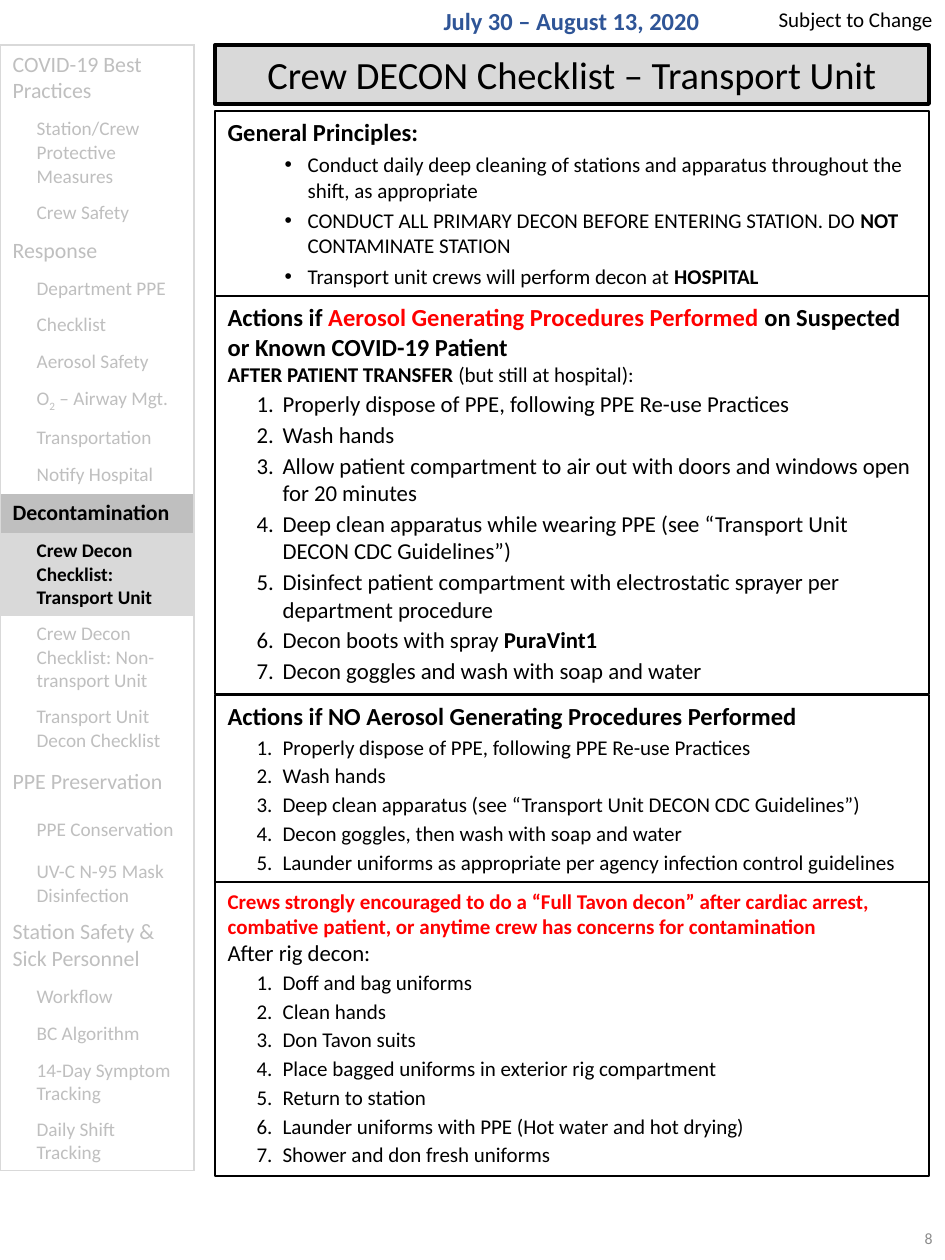
import pptx
import pptx.util
import pptx.dml.color
import pptx.enum.text
import pptx.oxml.ns
import lxml.etree

PX = 914400 / 126
FONT = "Calibri"
COLORS = {"black": "000000", "red": "FF0000", "blue": "2F5597", "gray": "8C8C8C",
          "muted": "BFBFBF", "light": "D9D9D9", "white": "FFFFFF"}
ALIGN = pptx.enum.text.PP_ALIGN
ANCHOR = pptx.enum.text.MSO_ANCHOR


def px(value):
    return pptx.util.Emu(round(value * PX))


def add_runs(para, size, runs):
    """Each run is (text, colour name, bold)."""
    for text, color, bold in runs:
        span = para.add_run()
        span.text = text
        span.font.name = FONT
        span.font.size = pptx.util.Pt(size)
        span.font.bold = bold
        span.font.color.rgb = pptx.dml.color.RGBColor.from_string(COLORS[color])


deck = pptx.Presentation()
deck.slide_width = px(945)
deck.slide_height = px(1260)
page = deck.slides.add_slide(deck.slide_layouts.get_by_name("Comparison"))

# Header and page number
labels = [
    ("July 30 – August 13, 2020", (410, 0, 323, 42), 14, "blue", True, ALIGN.CENTER, ANCHOR.TOP),
    ("Subject to Change", (732, 0, 213, 38), 12, "black", False, ALIGN.RIGHT, ANCHOR.TOP),
    ("8", (732, 1205, 213, 67), 9, "gray", False, ALIGN.RIGHT, ANCHOR.MIDDLE),
]
for text, place, size, color, bold, align, anchor in labels:
    box = page.shapes.add_textbox(*[px(v) for v in place])
    box.text_frame.word_wrap = True
    box.text_frame.vertical_anchor = anchor
    para = box.text_frame.paragraphs[0]
    para.alignment = align
    add_runs(para, size, [(text, color, bold)])

# Title
title = page.shapes.title
title.left, title.top, title.width, title.height = px(215), px(45), px(714), px(59)
title.fill.solid()
title.fill.fore_color.rgb = pptx.dml.color.RGBColor.from_string(COLORS["light"])
title.line.color.rgb = pptx.dml.color.RGBColor.from_string(COLORS["black"])
title.line.width = pptx.util.Pt(2.25)
title.text_frame.auto_size = pptx.enum.text.MSO_AUTO_SIZE.NONE
title.text_frame.vertical_anchor = ANCHOR.MIDDLE
title.text_frame.paragraphs[0].alignment = ALIGN.CENTER
add_runs(title.text_frame.paragraphs[0], 22,
         [("Crew DECON Checklist – Transport Unit", "black", False)])

# Navigation sidebar: (text, level, row height)
topics = [
    ("COVID-19 Best Practices", 0, 66), ("Station/Crew Protective Measures", 1, 83),
    ("Crew Safety", 1, 37), ("Response", 0, 39), ("Department PPE", 1, 37),
    ("Checklist", 1, 37), ("Aerosol Safety", 1, 37), ("O2 – Airway Mgt.", 1, 37),
    ("Transportation", 1, 37), ("Notify Hospital", 1, 37), ("Decontamination", 0, 39),
    ("Crew Decon Checklist: Transport Unit", 1, 83),
    ("Crew Decon Checklist: Non-transport Unit", 1, 83),
    ("Transport Unit Decon Checklist", 1, 59), ("PPE Preservation", 0, 48),
    ("PPE Conservation", 1, 48), ("UV-C N-95 Mask Disinfection", 1, 59),
    ("Station Safety & Sick Personnel", 0, 66), ("Workflow", 1, 37),
    ("BC Algorithm", 1, 37), ("14-Day Symptom Tracking", 1, 59), ("Daily Shift Tracking", 1, 59),
]
current = {"Decontamination": "muted", "Crew Decon Checklist: Transport Unit": "light"}
height = sum(topic[2] for topic in topics)
table = page.shapes.add_table(len(topics), 1, 0, px(45), px(194), px(height)).table
table.first_row = False
table.horz_banding = False
table.columns[0].width = px(194)
for index, (text, level, row_height) in enumerate(topics):
    table.rows[index].height = px(row_height)
    cell = table.cell(index, 0)
    cell.vertical_anchor = ANCHOR.MIDDLE

    # Only the outer edge of the table is drawn
    drawn = {"lnL": True, "lnR": True, "lnT": index == 0, "lnB": index == len(topics) - 1}
    props = cell._tc.get_or_add_tcPr()
    for edge, visible in drawn.items():
        line = lxml.etree.SubElement(props, pptx.oxml.ns.qn("a:" + edge), w="12700")
        if visible:
            fill = lxml.etree.SubElement(line, pptx.oxml.ns.qn("a:solidFill"))
            lxml.etree.SubElement(fill, pptx.oxml.ns.qn("a:srgbClr"), val=COLORS["light"])
        else:
            lxml.etree.SubElement(line, pptx.oxml.ns.qn("a:noFill"))

    active = text in current
    if active:
        cell.fill.solid()
        cell.fill.fore_color.rgb = pptx.dml.color.RGBColor.from_string(COLORS[current[text]])
    else:
        cell.fill.background()

    para = cell.text_frame.paragraphs[0]
    para._p.get_or_add_pPr().set("marL", str(px(24 * level)))
    parts = ["O", "2", " – Airway Mgt."] if text.startswith("O2") else [text]
    color = "black" if active else "muted"
    add_runs(para, 11 if level else 12.5, [(part, color, active) for part in parts])
    if len(parts) > 1:
        para.runs[1].font._element.set("baseline", "-25000")

# Checklist sections: (top, height, line width, paragraphs of (kind, size, runs))
# Kinds: margin, indent, space before, bullet tag, bullet attributes
kinds = {
    "plain": (0, 0, 0, "a:buNone", {}),
    "dot": (80, -23, 3, "a:buChar", {"char": "•"}),
    "step": (55, -26, 2, "a:buAutoNum", {"type": "arabicPeriod"}),
}
sections = [
    (111, 185, 1, [
        ("plain", 14, [("General Principles:", "black", True)]),
        ("dot", 12, [("Conduct daily deep cleaning of stations and apparatus throughout "
                      "the shift, as appropriate", "black", False)]),
        ("dot", 12, [("CONDUCT ALL PRIMARY DECON BEFORE ENTERING STATION. DO ", "black", False),
                     ("NOT", "black", True), (" CONTAMINATE STATION", "black", False)]),
        ("dot", 12, [("Transport unit crews will perform decon at ", "black", False),
                     ("HOSPITAL", "black", True)]),
    ]),
    (296, 398, 1, [
        ("plain", 14, [("Actions if ", "black", True),
                       ("Aerosol Generating Procedures Performed ", "red", True),
                       ("on Suspected or Known COVID-19 Patient", "black", True)]),
        ("plain", 12, [("AFTER PATIENT TRANSFER ", "black", True),
                       ("(but still at hospital):", "black", False)]),
        *[("step", 13, [(step, "black", False)]) for step in (
            "Properly dispose of PPE, following PPE Re-use Practices",
            "Wash hands",
            "Allow patient compartment to air out with doors and windows open for 20 minutes",
            "Deep clean apparatus while wearing PPE (see “Transport Unit DECON CDC Guidelines”)",
            "Disinfect patient compartment with electrostatic sprayer per department procedure")],
        ("step", 13, [("Decon boots with spray ", "black", False), ("PuraVint1", "black", True)]),
        ("step", 13, [("Decon goggles and wash with soap and water", "black", False)]),
    ]),
    (695, 187, 1, [
        ("plain", 14, [("Actions if NO Aerosol Generating Procedures Performed", "black", True)]),
        *[("step", 12, [(step, "black", False)]) for step in (
            "Properly dispose of PPE, following PPE Re-use Practices",
            "Wash hands",
            "Deep clean apparatus (see “Transport Unit DECON CDC Guidelines”)",
            "Decon goggles, then wash with soap and water",
            "Launder uniforms as appropriate per agency infection control guidelines")],
    ]),
    (882, 294, 0.75, [
        ("plain", 12, [("Crews strongly encouraged to do a “Full Tavon decon” after cardiac arrest, "
                        "combative patient, or anytime crew has concerns for contamination",
                        "red", True)]),
        ("plain", 13, [("After rig decon:", "black", False)]),
        *[("step", 12, [(step, "black", False)]) for step in (
            "Doff and bag uniforms",
            "Clean hands",
            "Don Tavon suits",
            "Place bagged uniforms in exterior rig compartment",
            "Return to station",
            "Launder uniforms with PPE (Hot water and hot drying)",
            "Shower and don fresh uniforms")],
    ]),
]
bodies = [holder for holder in page.placeholders if holder.placeholder_format.idx > 0]
for body, (top, height, line_width, paragraphs) in zip(bodies, sections):
    body.left, body.top, body.width, body.height = px(215), px(top), px(714), px(height)
    body.line.color.rgb = pptx.dml.color.RGBColor.from_string(COLORS["black"])
    body.line.width = pptx.util.Pt(line_width)
    frame = body.text_frame
    frame.auto_size = pptx.enum.text.MSO_AUTO_SIZE.NONE
    frame.vertical_anchor = ANCHOR.TOP
    for index, (kind, size, runs) in enumerate(paragraphs):
        para = frame.add_paragraph() if index else frame.paragraphs[0]
        margin, indent, before, bullet, attributes = kinds[kind]
        props = para._p.get_or_add_pPr()
        props.set("marL", str(px(margin)))
        props.set("indent", str(px(indent)))
        if bullet == "a:buChar":
            lxml.etree.SubElement(props, pptx.oxml.ns.qn("a:buFont"), typeface="Arial")
        elif bullet == "a:buAutoNum":
            lxml.etree.SubElement(props, pptx.oxml.ns.qn("a:buFont"), typeface=FONT)
        lxml.etree.SubElement(props, pptx.oxml.ns.qn(bullet), attributes)
        para.space_before = pptx.util.Pt(before)
        add_runs(para, size, runs)

deck.save("out.pptx")
